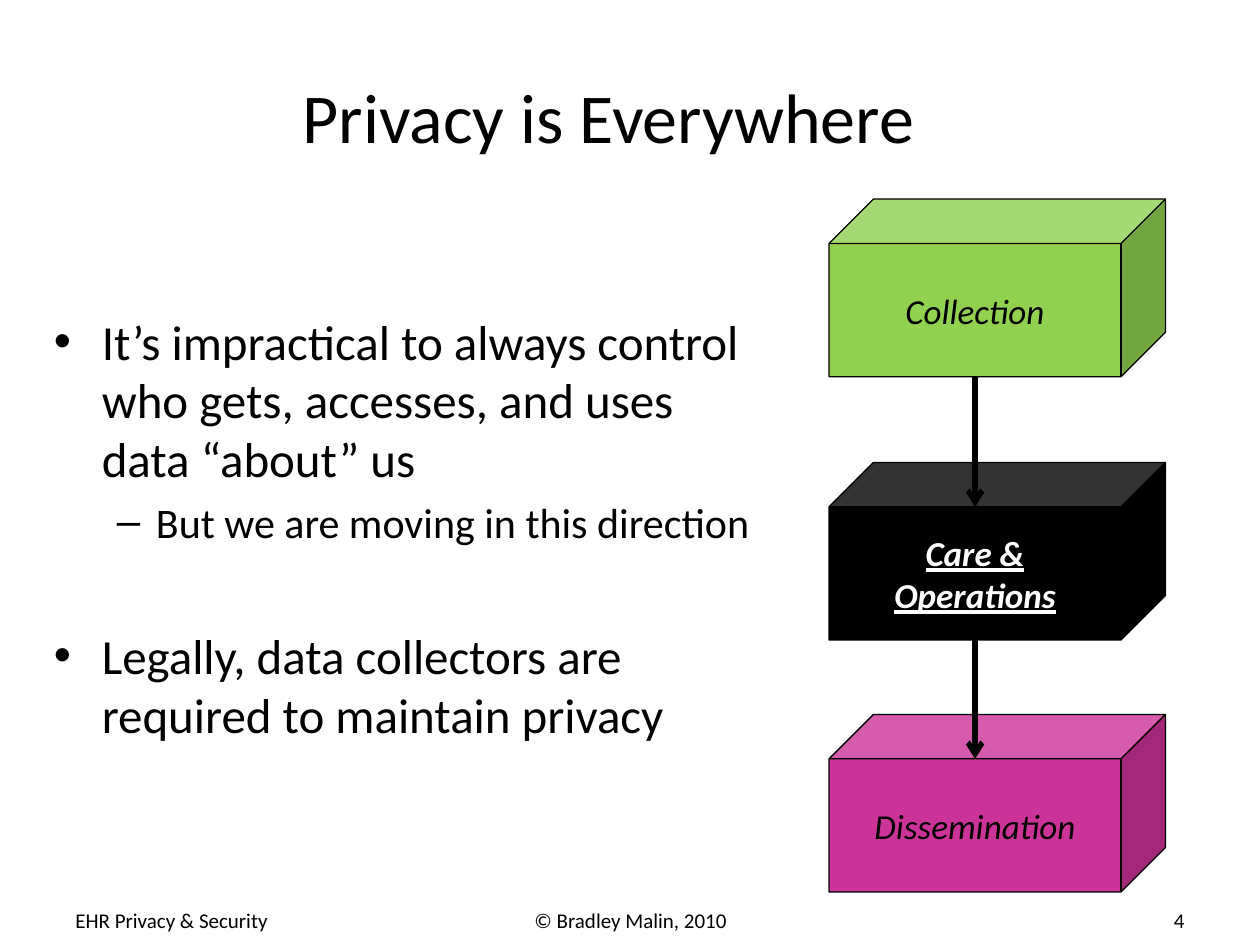
from lxml.etree import SubElement
from pptx import Presentation
from pptx.dml.color import RGBColor
from pptx.enum.shapes import MSO_CONNECTOR as Connector, MSO_SHAPE as Shape
from pptx.enum.text import MSO_ANCHOR as Anchor, PP_ALIGN as Align
from pptx.oxml.ns import qn
from pptx.util import Inches, Pt


def color(value):
    return RGBColor.from_string(value)


class SlideBuilder:
    font = "Calibri"
    ink = "000000"

    def __init__(self, slide):
        self.slide = slide

    def style(self, paragraph, size, fill=ink, align=Align.LEFT, **marks):
        paragraph.alignment = align
        for run in paragraph.runs:
            run.font.name = self.font
            run.font.size = Pt(size)
            run.font.color.rgb = color(fill)
            for mark, value in marks.items():
                setattr(run.font, mark, value)

    def frame(self, left, top, width, height, anchor=Anchor.MIDDLE):
        box = self.slide.shapes.add_textbox(*map(Inches, (left, top, width, height)))
        box.text_frame.word_wrap = True
        box.text_frame.vertical_anchor = anchor
        return box.text_frame

    def label(self, text, place, size, align):
        frame = self.frame(*place)
        frame.text = text
        self.style(frame.paragraphs[0], size, align=align)

    def bullets(self, items, place):
        frame = self.frame(*place, anchor=Anchor.TOP)
        frame.text = "\n".join(item[0] for item in items)
        for paragraph, (_, level, before) in zip(frame.paragraphs, items):
            symbol, size, margin, hang = (("•", 28, 0.38, 0.38), ("–", 24, 0.81, 0.31))[level]
            paragraph.level = level
            paragraph.space_before = Pt(before)
            props = paragraph._p.get_or_add_pPr()
            props.set("marL", str(Inches(margin)))
            props.set("indent", str(-Inches(hang)))
            SubElement(props, qn("a:buFont"), typeface="Arial")
            SubElement(props, qn("a:buChar"), char=symbol)
            self.style(paragraph, size)

    def cube(self, text, place, fill, text_color, **marks):
        cube = self.slide.shapes.add_shape(Shape.CUBE, *map(Inches, place))
        cube.shadow.inherit = False
        cube.adjustments[0] = 0.25
        cube.fill.solid()
        cube.fill.fore_color.rgb = color(fill)
        cube.line.color.rgb = color(self.ink)
        cube.line.width = Pt(0.75)
        frame = cube.text_frame
        frame.word_wrap = True
        frame.vertical_anchor = Anchor.MIDDLE
        frame.text = text
        for paragraph in frame.paragraphs:
            self.style(paragraph, 20, text_color, Align.CENTER, italic=True, **marks)

    def arrow(self, x, start, end):
        arrow = self.slide.shapes.add_connector(
            Connector.STRAIGHT, *map(Inches, (x, start, x, end)))
        arrow.line.color.rgb = color(self.ink)
        arrow.line.width = Pt(3)
        SubElement(arrow.line._get_or_add_ln(), qn("a:tailEnd"), type="arrow")
        SubElement(arrow._element.spPr, qn("a:effectLst"))


def main():
    deck = Presentation()
    deck.slide_width, deck.slide_height = Inches(10), Inches(7.5)
    page = SlideBuilder(deck.slides.add_slide(deck.slide_layouts[6]))

    page.label("Privacy is Everywhere", (0.33, 0.17, 9, 1.5), 40, Align.CENTER)
    page.bullets([
        ("It’s impractical to always control who gets, accesses, and uses data “about” us", 0, 0),
        ("But we are moving in this direction", 1, 4.8),
        ("Legally, data collectors are required to maintain privacy", 0, 45),
    ], (0.33, 2.42, 5.83, 4.25))

    left, width, height = 6.58, 2.67, 1.41
    depth = height / 4
    tops = (1.58, 3.67, 5.67)
    stages = (
        ("Collection", "92D050", "000000", {}),
        ("Care &\nOperations", "000000", "FFFFFF", {"bold": True, "underline": True}),
        ("Dissemination", "CC3399", "000000", {}),
    )
    for top, (stage, fill, text_color, marks) in zip(tops, stages):
        page.cube(stage, (left, top, width, height), fill, text_color, **marks)
    for upper, lower in zip(tops, tops[1:]):
        page.arrow(left + (width - depth) / 2, upper + height, lower + depth)

    for text, x, width, align in (
        ("EHR Privacy & Security", 0.5, 2.33, Align.LEFT),
        ("© Bradley Malin, 2010", 3.42, 3.17, Align.CENTER),
        ("4", 7.17, 2.33, Align.RIGHT),
    ):
        page.label(text, (x, 7.1, width, 0.4), 12, align)

    deck.save("out.pptx")


if __name__ == "__main__":
    main()
